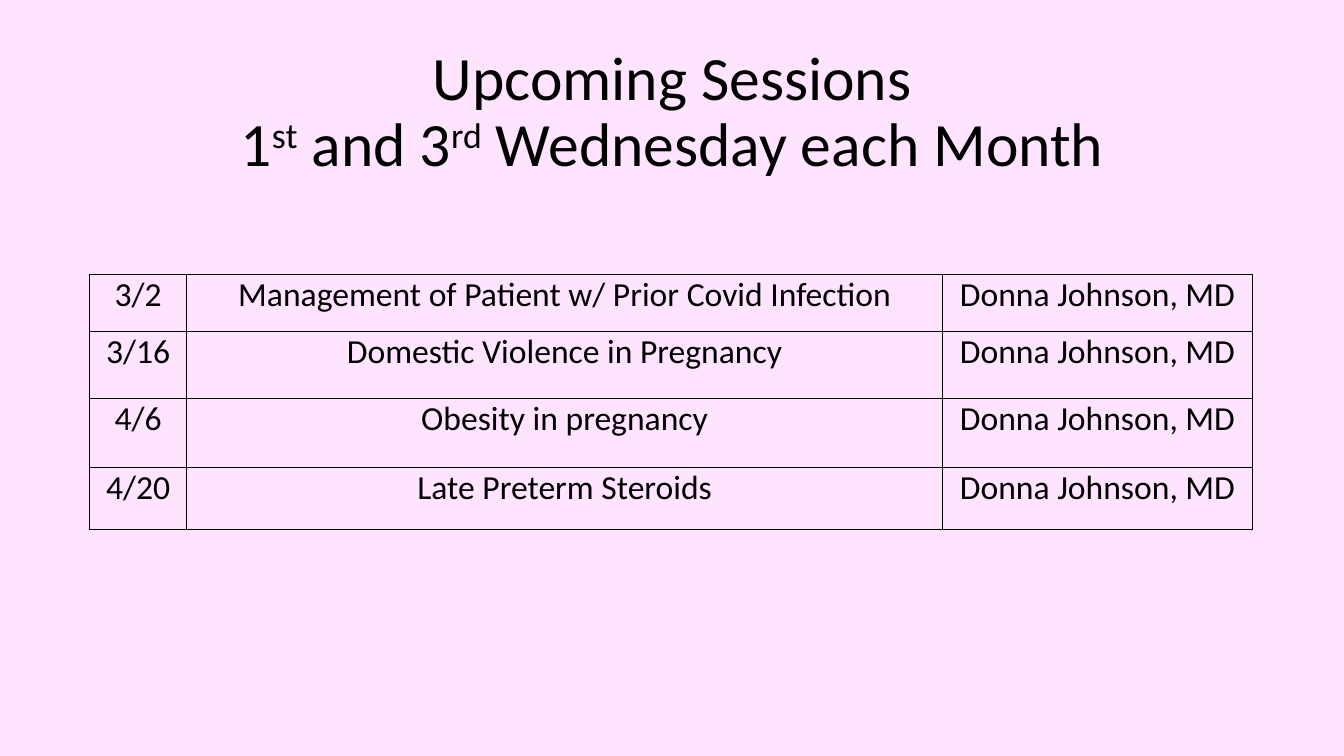
from lxml import etree
from pptx import Presentation
from pptx.dml.color import RGBColor
from pptx.enum import text
from pptx.oxml import ns
from pptx.util import Inches, Pt

BLACK = RGBColor(0x00, 0x00, 0x00)
PALE_PINK = RGBColor(0xFF, 0xE4, 0xFF)
FONT = "Calibri"
SPEAKER = "Donna Johnson, MD"
SESSIONS = [
    ("3/2", "Management of Patient w/ Prior Covid Infection"),
    ("3/16", "Domestic Violence in Pregnancy"),
    ("4/6", "Obesity in pregnancy"),
    ("4/20", "Late Preterm Steroids"),
]
SCHEDULE_PARTS = [
    ("1", False),
    ("st", True),
    (" and 3", False),
    ("rd", True),
    (" Wednesday each Month", False),
]
COLUMN_WIDTHS = (0.96, 7.5, 3.07)
ROW_HEIGHTS = (0.57, 0.66, 0.69, 0.61)


def format_paragraph(paragraph, size):
    """Centre a paragraph and set the font of its runs."""
    paragraph.alignment = text.PP_ALIGN.CENTER
    for run in paragraph.runs:
        run.font.name = FONT
        run.font.size = Pt(size)
        run.font.color.rgb = BLACK


def add_title(slide):
    """Add the two-line heading with raised ordinal endings."""
    box = slide.shapes.add_textbox(Inches(0.92), Inches(0.4), Inches(11.5), Inches(1.45))
    frame = box.text_frame
    frame.word_wrap = True
    frame.vertical_anchor = text.MSO_ANCHOR.MIDDLE
    paragraph = frame.paragraphs[0]
    paragraph.text = "Upcoming Sessions\v"
    paragraph.line_spacing = 0.9
    for part, raised in SCHEDULE_PARTS:
        run = paragraph.add_run()
        run.text = part
        if raised:
            run.font._element.set("baseline", "30000")
    format_paragraph(paragraph, 44)


def add_borders(cell):
    """Draw a thin black line on every side of a cell."""
    properties = cell._tc.get_or_add_tcPr()
    for index, side in enumerate(("a:lnL", "a:lnR", "a:lnT", "a:lnB")):
        line = etree.Element(ns.qn(side), w=str(Pt(1)))
        fill = etree.SubElement(line, ns.qn("a:solidFill"))
        etree.SubElement(fill, ns.qn("a:srgbClr"), val=str(BLACK))
        properties.insert(index, line)


def fill_cell(cell, content):
    """Write centred text into a transparent, bordered cell."""
    cell.text_frame.text = content
    cell.margin_left = cell.margin_right = Inches(0.07)
    cell.margin_top = cell.margin_bottom = 0
    cell.fill.background()
    add_borders(cell)
    format_paragraph(cell.text_frame.paragraphs[0], 24)


def add_sessions_table(slide):
    """Add the table of dates, topics and speakers."""
    frame = slide.shapes.add_table(
        len(SESSIONS), len(COLUMN_WIDTHS), Inches(0.89), Inches(2.72),
        Inches(sum(COLUMN_WIDTHS)), Inches(sum(ROW_HEIGHTS)))
    table = frame.table
    table.first_row = False
    table.horz_banding = False
    for column, width in zip(table.columns, COLUMN_WIDTHS):
        column.width = Inches(width)
    for row, height, session in zip(table.rows, ROW_HEIGHTS, SESSIONS):
        row.height = Inches(height)
        for cell, content in zip(row.cells, (*session, SPEAKER)):
            fill_cell(cell, content)


def main():
    """Build the upcoming sessions slide."""
    presentation = Presentation()
    presentation.slide_width = Inches(13.33)
    presentation.slide_height = Inches(7.5)
    slide = presentation.slides.add_slide(presentation.slide_layouts[6])
    slide.background.fill.solid()
    slide.background.fill.fore_color.rgb = PALE_PINK
    add_title(slide)
    add_sessions_table(slide)
    presentation.save("out.pptx")


if __name__ == "__main__":
    main()
